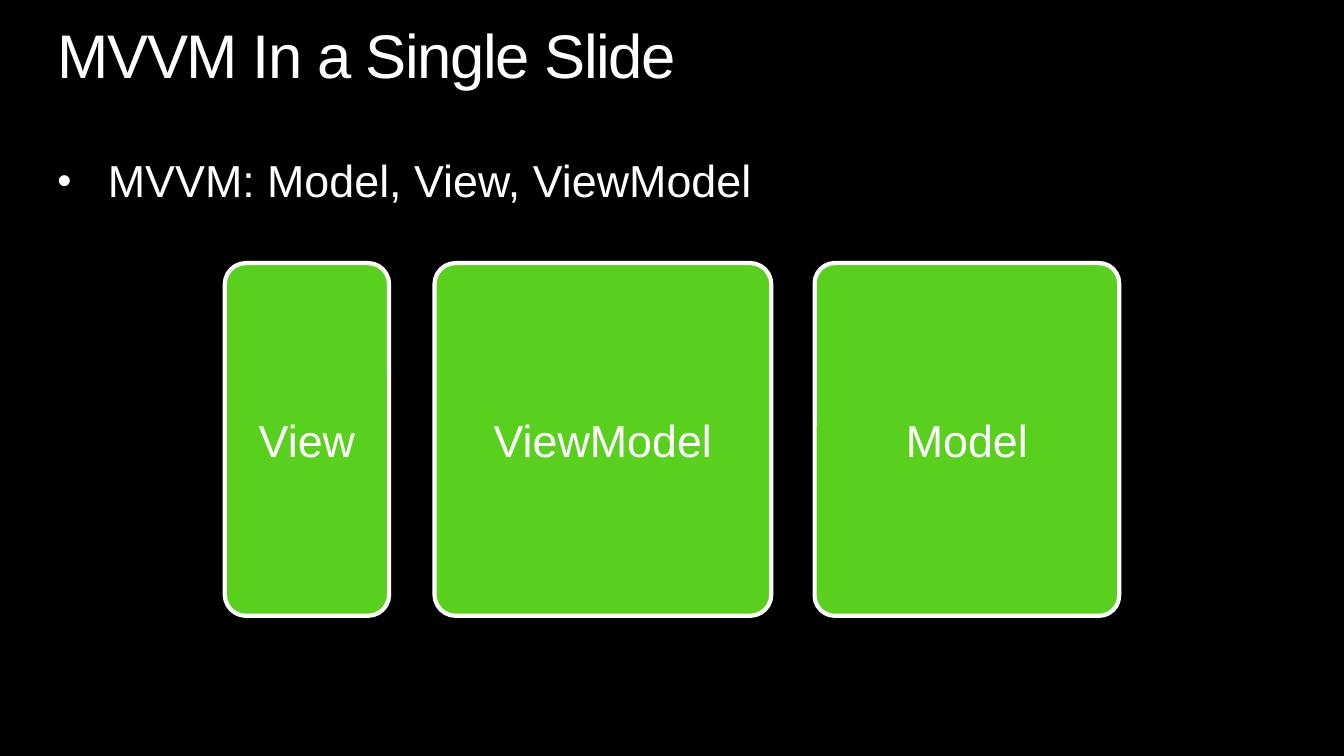
import pptx
import pptx.util
import pptx.dml.color
import pptx.enum.shapes
import pptx.enum.text
import pptx.oxml.ns
from dataclasses import dataclass
from lxml import etree

Inches = pptx.util.Inches
Pt = pptx.util.Pt
RGB = pptx.dml.color.RGBColor.from_string
Align = pptx.enum.text.PP_ALIGN
Anchor = pptx.enum.text.MSO_ANCHOR


@dataclass(frozen=True)
class Theme:
    """Colours, font and type sizes."""
    back: str = "000000"
    text: str = "FFFFFF"
    box: str = "59D01E"
    font: str = "Arial"
    title: int = 44
    body: int = 32
    line: int = 3


class Deck:
    """Draws styled elements on the current slide."""

    def __init__(self, theme):
        self.theme = theme
        self.prs = pptx.Presentation()
        self.prs.slide_width = Inches(13.33)
        self.prs.slide_height = Inches(7.5)

    def add_slide(self):
        """Start a slide with a plain background."""
        self.s = self.prs.slides.add_slide(self.prs.slide_layouts[6])
        fill = self.s.background.fill
        fill.solid()
        fill.fore_color.rgb = RGB(self.theme.back)

    def label(self, tf, text, size, **paragraph):
        """Put one styled run in the first paragraph."""
        p = tf.paragraphs[0]
        for name, value in paragraph.items():
            setattr(p, name, value)
        r = p.add_run()
        r.text = text
        for name, value in {"name": self.theme.font, "size": Pt(size)}.items():
            setattr(r.font, name, value)
        r.font.color.rgb = RGB(self.theme.text)
        return p, r

    def text(self, text, top, height, size):
        """Add a full-width text box without margins."""
        sp = self.s.shapes.add_textbox(
            Inches(0.57), Inches(top), Inches(12.19), Inches(height))
        tf = sp.text_frame
        frame = {"word_wrap": True, "margin_left": 0, "margin_right": 0,
                 "margin_top": 0, "margin_bottom": 0}
        for name, value in frame.items():
            setattr(tf, name, value)
        return self.label(tf, text, size, line_spacing=0.9)

    def title(self, text):
        """Add the slide title with tightened letters."""
        p, r = self.text(text, 0.25, 0.67, self.theme.title)
        r._r.get_or_add_rPr().set("spc", "-100")

    def bullet(self, text):
        """Add a bulleted line with a hanging indent."""
        p, r = self.text(text, 1.58, 0.48, self.theme.body)
        pPr = p._p.get_or_add_pPr()
        pPr.set("marL", str(Inches(0.5)))
        pPr.set("indent", str(Inches(-0.5)))
        marks = {"a:buSzPct": ("val", "90000"),
                 "a:buFont": ("typeface", self.theme.font),
                 "a:buChar": ("char", "•")}
        for tag, (name, value) in marks.items():
            etree.SubElement(pPr, pptx.oxml.ns.qn(tag)).set(name, value)

    def box(self, text, left, width, radius):
        """Add a labelled rounded box."""
        sp = self.s.shapes.add_shape(
            pptx.enum.shapes.MSO_SHAPE.ROUNDED_RECTANGLE,
            Inches(left), Inches(2.61), Inches(width), Inches(3.5))
        sp.adjustments[0] = radius / width
        sp.shadow.inherit = False
        sp.fill.solid()
        sp.fill.fore_color.rgb = RGB(self.theme.box)
        sp.line.color.rgb = RGB(self.theme.text)
        sp.line.width = Pt(self.theme.line)
        tf = sp.text_frame
        for name, value in {"word_wrap": True,
                            "vertical_anchor": Anchor.MIDDLE}.items():
            setattr(tf, name, value)
        self.label(tf, text, self.theme.body, alignment=Align.CENTER)


def main():
    """Build the slide and save it."""
    deck = Deck(Theme())
    deck.add_slide()
    deck.title("MVVM In a Single Slide")
    deck.bullet("MVVM: Model, View, ViewModel")
    layers = [("View", 2.23, 1.63, 0.21), ("ViewModel", 4.31, 3.34, 0.21),
              ("Model", 8.08, 3.02, 0.2)]
    for layer in layers:
        deck.box(*layer)
    deck.prs.save("out.pptx")


if __name__ == "__main__":
    main()
